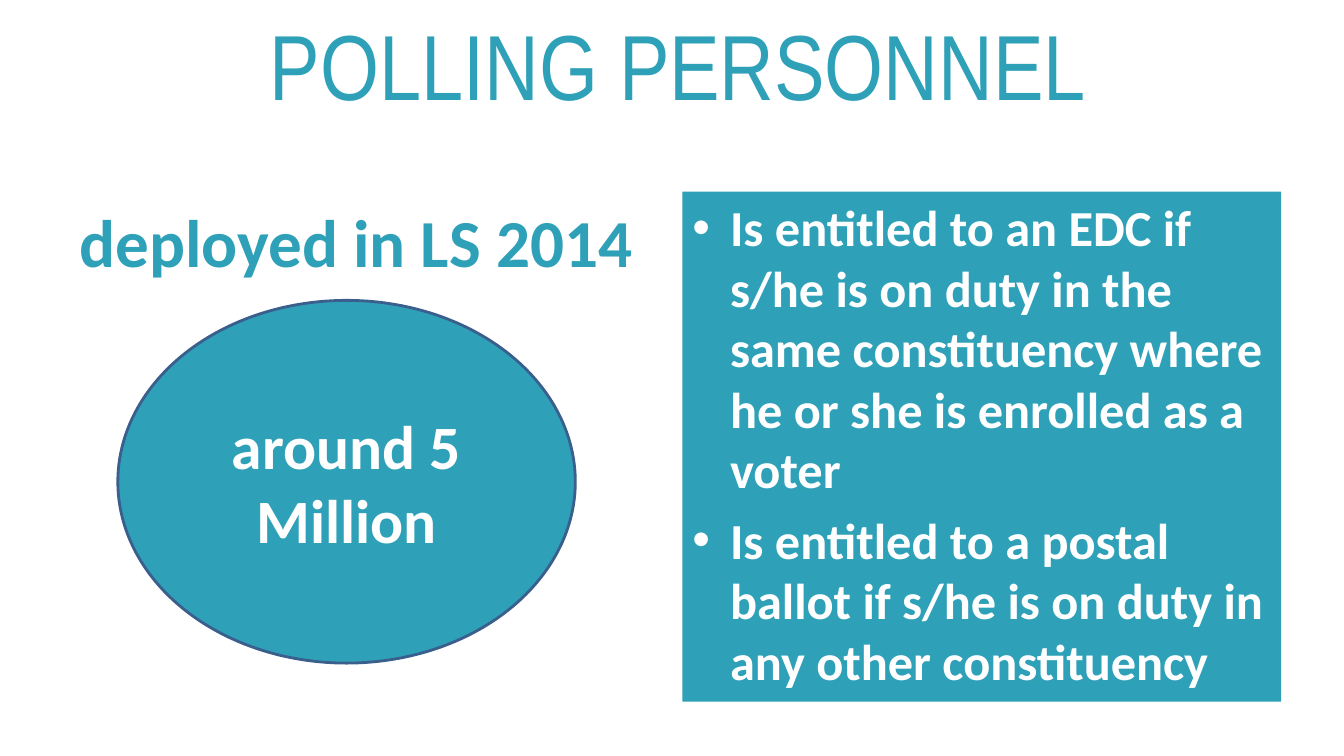
from lxml import etree
from pptx import Presentation
from pptx.dml.color import RGBColor
from pptx.enum.shapes import MSO_SHAPE
from pptx.enum.text import MSO_ANCHOR, MSO_AUTO_SIZE, PP_ALIGN
from pptx.oxml.ns import qn
from pptx.util import Cm, Pt

CENTER, LEFT = PP_ALIGN.CENTER, PP_ALIGN.LEFT
TOP, MIDDLE = MSO_ANCHOR.TOP, MSO_ANCHOR.MIDDLE
SHRINK, NO_FIT = MSO_AUTO_SIZE.TEXT_TO_FIT_SHAPE, MSO_AUTO_SIZE.NONE
RECTANGLE, OVAL = MSO_SHAPE.RECTANGLE, MSO_SHAPE.OVAL
TITLE_ONLY = 5

TEAL, NAVY, WHITE = "2EA1B8", "3A5F8C", "FFFFFF"
ENTITLEMENTS = [
    "Is entitled to an EDC if s/he is on duty in the same constituency "
    "where he or she is enrolled as a voter",
    "Is entitled to a postal ballot if s/he is on duty in any other constituency",
]


def rgb(color):
    return RGBColor.from_string(color)


def write(sp, lines, size, color, font="Calibri", bold=True,
          align=CENTER, anchor=MIDDLE, fit=NO_FIT):
    tf = sp.text_frame
    tf.text = "\n".join(lines)
    tf.word_wrap = True
    tf.auto_size = fit
    tf.vertical_anchor = anchor
    for p in tf.paragraphs:
        p.alignment = align
        p.font.name, p.font.size, p.font.bold = font, Pt(size), bold
        p.font.color.rgb = rgb(color)


def add_bullets(sp, indent, space):
    for p in sp.text_frame.paragraphs:
        p.space_before = Pt(space)
        pPr = p._p.get_or_add_pPr()
        pPr.set("marL", str(indent))
        pPr.set("indent", str(-indent))
        font = etree.Element(qn("a:buFont"), typeface="Arial")
        bullet = etree.Element(qn("a:buChar"), char="•")
        # Bullets stand after the spacing and before the default run properties
        defaults = pPr.find(qn("a:defRPr"))
        defaults.addprevious(font)
        defaults.addprevious(bullet)


def add_filled(slide, kind, left, top, width, height, line=None):
    sp = slide.shapes.add_shape(kind, Cm(left), Cm(top), Cm(width), Cm(height))
    sp.shadow.inherit = False
    sp.fill.solid()
    sp.fill.fore_color.rgb = rgb(TEAL)
    if line:
        sp.line.color.rgb = rgb(line)
        sp.line.width = Pt(2)
    else:
        sp.line.fill.background()
    return sp


def main():
    prs = Presentation()
    prs.slide_width, prs.slide_height = Cm(33.87), Cm(19.05)
    slide = prs.slides.add_slide(prs.slide_layouts[TITLE_ONLY])

    # Title
    title = slide.shapes.title
    title.left, title.top = Cm(1.85), Cm(0)
    title.width, title.height = Cm(30.48), Cm(3.18)
    write(title, ["POLLING PERSONNEL"], 66, TEAL, font="Arial Narrow", bold=False)

    # Heading on the left
    heading = slide.shapes.add_textbox(Cm(1.7), Cm(4.93), Cm(14.55), Cm(12.09))
    write(heading, ["deployed in LS 2014"], 48, TEAL, anchor=TOP)

    # Entitlements panel
    panel = add_filled(slide, RECTANGLE, 17.2, 4.83, 15.09, 12.85)
    write(panel, ENTITLEMENTS, 36, WHITE, align=LEFT, anchor=TOP, fit=SHRINK)
    add_bullets(panel, indent=Cm(0.95), space=7.2)

    # Headcount ellipse
    headcount = add_filled(slide, OVAL, 2.97, 7.57, 11.53, 9.14, line=NAVY)
    write(headcount, ["around 5 Million"], 44, WHITE)

    prs.save("out.pptx")


if __name__ == "__main__":
    main()
